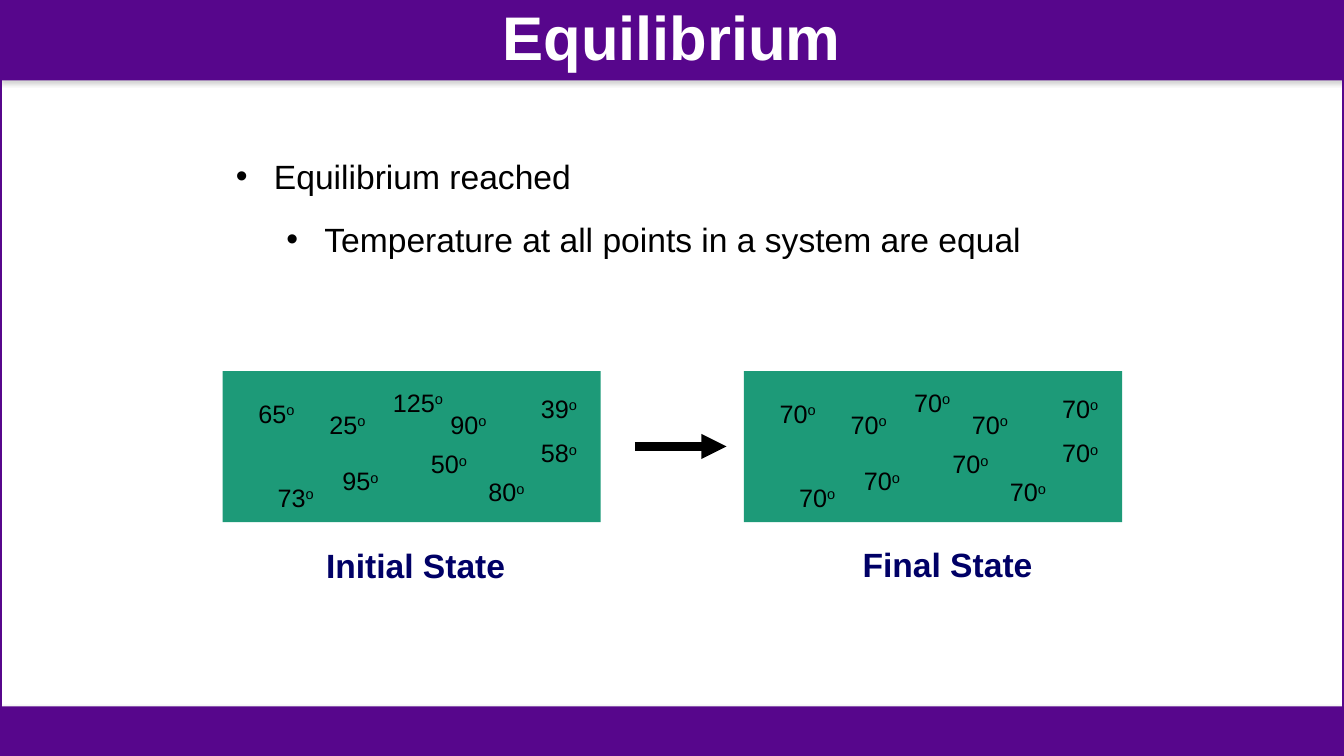
from lxml import etree
from pptx import Presentation
from pptx.dml.color import RGBColor as Rgb
from pptx.enum.shapes import MSO_CONNECTOR as Link, MSO_SHAPE as Form
from pptx.enum.text import MSO_ANCHOR as Anchor, MSO_AUTO_SIZE as Fit, PP_ALIGN as Align
from pptx.oxml import parse_xml
from pptx.oxml.ns import nsdecls, qn
from pptx.util import Cm, Pt

HUES = {
    "purple": "57068C",
    "green": "1D9A78",
    "navy": "000066",
    "black": "000000",
    "white": "FFFFFF",
}
WIDE, HIGH = Cm(33.87), Cm(19.05)
SPOTS = [
    (0.65, 0.56), (1.14, 2.67), (4.04, 0.28), (5, 1.83), (7.77, 0.43),
    (2.44, 0.84), (6.45, 2.54), (2.77, 2.26), (5.49, 0.84), (7.77, 1.55),
]
START = ["65", "73", "125", "50", "39", "25", "80", "95", "90", "58"]
END = ["70"] * len(SPOTS)


def hue(name):
    return Rgb.from_string(HUES[name])


def add_run(para, text, size, color="black", bold=False):
    run = para.add_run()
    run.text = text
    font = run.font
    font.name, font.size, font.bold = "Arial", Pt(size), bold
    font.color.rgb = hue(color)
    return run


def place(shape, left, top, width, height):
    shape.left, shape.top = left, top
    shape.width, shape.height = width, height


def add_rect(shapes, left, top, width, height, color):
    rect = shapes.add_shape(Form.RECTANGLE, left, top, width, height)
    rect.shadow.inherit = False
    rect.fill.solid()
    rect.fill.fore_color.rgb = hue(color)
    rect.line.fill.background()
    return rect


def add_bar(shapes, top, height):
    bar = add_rect(shapes, 0, top, WIDE, height, "purple")
    glow = bar._element.spPr.find(qn("a:effectLst"))
    glow.append(parse_xml(
        f'<a:outerShdw {nsdecls("a")} blurRad="{Pt(3.1)}" dist="{Pt(1.8)}" '
        'dir="5400000" rotWithShape="0"><a:srgbClr val="808080">'
        '<a:alpha val="35000"/></a:srgbClr></a:outerShdw>'))


def add_frame(shapes):
    frame = add_rect(shapes, 0, 0, WIDE, HIGH, "white")
    frame.fill.background()
    frame.line.color.rgb = hue("purple")
    frame.line.width = Pt(2.25)


def set_title(slide, text):
    title = slide.shapes.title
    place(title, 0, 0, WIDE, Cm(2.03))
    slide.shapes._spTree.append(title._element)
    frame = title.text_frame
    frame.auto_size = Fit.NONE
    frame.vertical_anchor = Anchor.MIDDLE
    para = frame.paragraphs[0]
    para.alignment, para.line_spacing = Align.CENTER, 0.9
    add_run(para, text, 44, "white", True)


def set_list(body, items):
    place(body, Cm(5.69), Cm(3.3), Cm(20.35), Cm(12.57))
    frame = body.text_frame
    frame.auto_size = Fit.NONE
    for level, text in enumerate(items):
        para = frame.add_paragraph() if level else frame.paragraphs[0]
        para.level, para.line_spacing = level, 1.5
        para.space_before = Pt(1.5 * level)
        props = para._p.get_or_add_pPr()
        props.set("marL", str(Cm(0.96 + 1.27 * level)))
        props.set("indent", str(-Cm(0.96)))
        color = etree.SubElement(props, qn("a:buClr"))
        etree.SubElement(color, qn("a:srgbClr"), val=HUES["black"])
        etree.SubElement(props, qn("a:buFont"), typeface="Arial")
        etree.SubElement(props, qn("a:buChar"), char="•")
        add_run(para, text, 24)


def add_box(shapes, left, top, width, height):
    box = shapes.add_textbox(Cm(left), Cm(top), Cm(width), Cm(height))
    box.text_frame.word_wrap = True
    return box.text_frame.paragraphs[0]


def add_state(slide, left, temps):
    top = 9.35
    group = slide.shapes.add_group_shape().shapes
    add_rect(group, Cm(left), Cm(top), Cm(9.53), Cm(3.81), "green")
    for (x, y), temp in zip(SPOTS, temps):
        width = 1.47 + 0.77 * (len(temp) - 2)
        para = add_box(group, left + x, top + y, width, 1.02)
        add_run(para, temp, 18)
        mark = add_run(para, "o", 18)
        mark._r.get_or_add_rPr().set("baseline", "30000")


def add_label(slide, text, left, top, width, align):
    para = add_box(slide.shapes, left, top, width, 2.64)
    para.alignment = align
    add_run(para, text, 24, "navy", True)


def add_arrow(slide, left, right, y):
    arrow = slide.shapes.add_connector(
        Link.STRAIGHT, Cm(left), Cm(y), Cm(right), Cm(y))
    arrow.line.color.rgb = hue("black")
    arrow.line.width = Pt(6)
    etree.SubElement(arrow.line._get_or_add_ln(), qn("a:tailEnd"), type="triangle")
    etree.SubElement(arrow._element.spPr, qn("a:effectLst"))


def main():
    deck = Presentation()
    deck.slide_width, deck.slide_height = WIDE, HIGH
    slide = deck.slides.add_slide(deck.slide_layouts[1])
    add_bar(slide.shapes, 0, Cm(2.03))
    add_frame(slide.shapes)
    add_bar(slide.shapes, Cm(17.8), Cm(1.25))
    set_title(slide, "Equilibrium")
    set_list(slide.placeholders[1], [
        "Equilibrium reached",
        "Temperature at all points in a system are equal",
    ])
    add_state(slide, 5.61, START)
    add_label(slide, "Initial State", 7.72, 13.61, 5.51, Align.CENTER)
    add_state(slide, 18.75, END)
    add_label(slide, "Final State", 21.49, 13.59, 5.08, Align.LEFT)
    add_arrow(slide, 16, 18.31, 11.25)
    deck.save("out.pptx")


if __name__ == "__main__":
    main()
